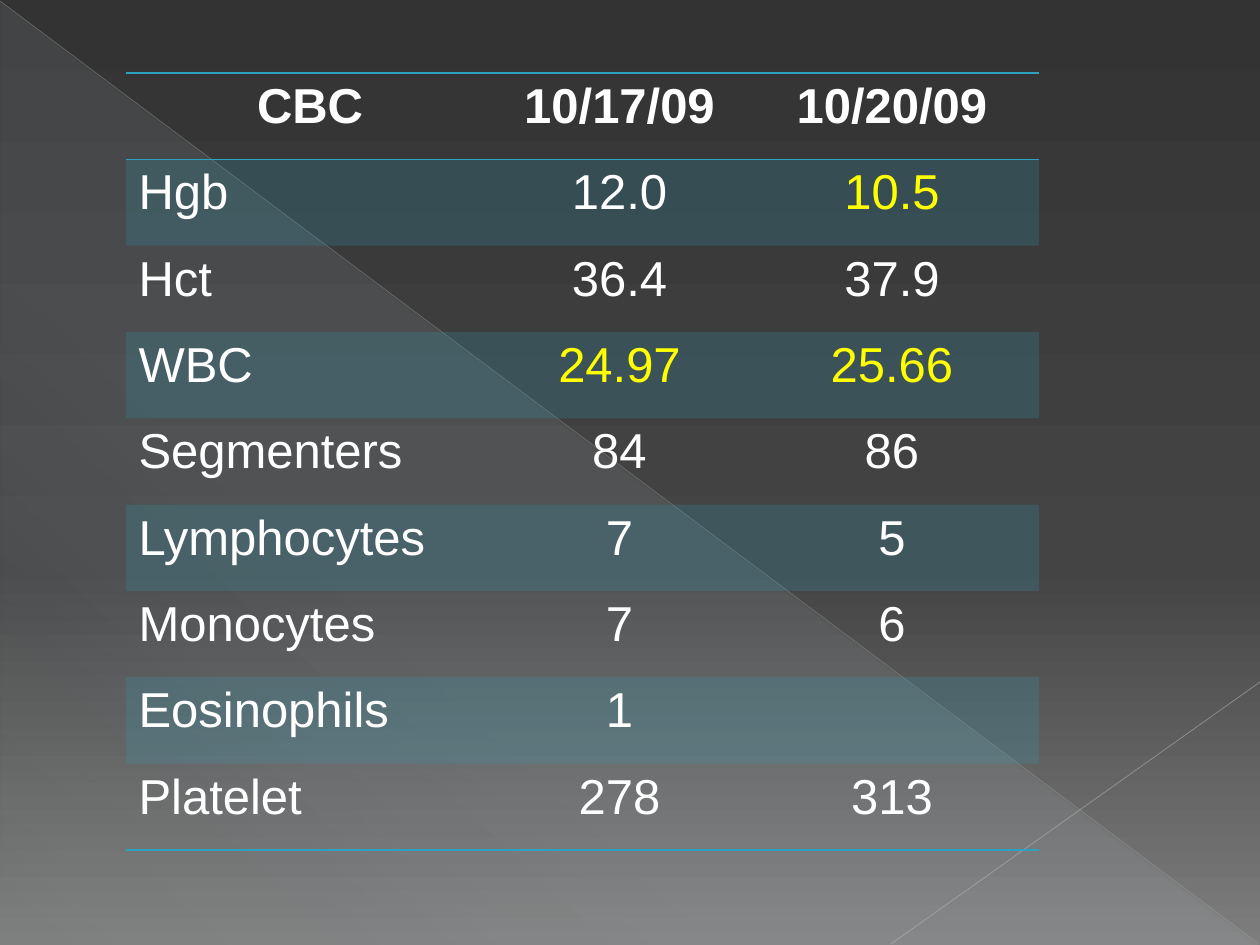
"""Build a slide with a table of blood counts from two dates."""
from typing import NamedTuple

from lxml import etree
from pptx import Presentation, util as u
from pptx.dml.color import RGBColor
from pptx.enum import shapes, text
from pptx.oxml import ns

SCALE = u.Inches(1) / 126
WHITE, YELLOW, TEAL = "FFFFFF", "FFFF00", "2DA2BF"
PLAIN = "{2D5ABB26-0587-4C30-8999-92F81FD0307C}"


class Stop(NamedTuple):
    pos: int
    hue: str
    alpha: int = 100


class Line(NamedTuple):
    start: tuple[int, int]
    end: tuple[int, int]
    hue: str
    width: float
    alpha: int


class Row(NamedTuple):
    name: str
    first: str
    second: str
    marks: tuple[int, ...] = ()


BACK = [Stop(0, "333333"), Stop(60, "444444"), Stop(100, "7D7D7D")]
SHEEN = [Stop(0, "DEF5FA", 10), Stop(70, "DEF5FA", 8), Stop(100, "DEF5FA", 1)]
LINES = [
    Line((0, 1), (1259, 944), "B9B9B9", 0.39, 35),
    Line((1260, 682), (891, 944), "C1C1C1", 0.47, 45),
]
ROWS = [
    Row("CBC", "10/17/09", "10/20/09"),
    Row("Hgb", "12.0", "10.5", (2,)),
    Row("Hct", "36.4", "37.9"),
    Row("WBC", "24.97", "25.66", (1, 2)),
    Row("Segmenters", "84", "86"),
    Row("Lymphocytes", "7", "5"),
    Row("Monocytes", "7", "6"),
    Row("Eosinophils", "1", ""),
    Row("Platelet", "278", "313"),
]
WIDTHS = (368, 251, 294)


def px(size: int) -> int:
    return round(size * SCALE)


def color(code: str) -> RGBColor:
    return RGBColor.from_string(code)


def add(root, tag: str, **attrs):
    return etree.SubElement(root, ns.qn(tag), {k: str(v) for k, v in attrs.items()})


def fade(root, alpha: int) -> None:
    add(next(root.iter(ns.qn("a:srgbClr"))), "a:alpha", val=alpha * 1000)


def blend(root, stops: list[Stop], angle: int) -> None:
    old = next(root.iter(ns.qn("a:solidFill")))
    new = etree.Element(ns.qn("a:gradFill"), rotWithShape="1")
    group = add(new, "a:gsLst")
    for stop in stops:
        mark = add(group, "a:gs", pos=stop.pos * 1000)
        add(mark, "a:srgbClr", val=stop.hue)
        fade(mark, stop.alpha)
    add(new, "a:lin", ang=angle * 60000, scaled=0)
    old.getparent().replace(old, new)


def draw(slide, line: Line) -> None:
    ends = [px(n) for n in line.start + line.end]
    item = slide.shapes.add_connector(shapes.MSO_CONNECTOR.STRAIGHT, *ends)
    item.line.color.rgb = color(line.hue)
    item.line.width = u.Pt(line.width)
    props = item.element.spPr
    fade(props, line.alpha)
    add(props, "a:effectLst")


def edge(props, tag: str) -> None:
    rule = add(props, tag, w=u.Pt(1))
    add(add(rule, "a:solidFill"), "a:srgbClr", val=TEAL)


def write(cell, words: str, *, hue: str = WHITE, bold: bool = False,
          center: bool = True) -> None:
    part = cell.text_frame.paragraphs[0]
    part.alignment = text.PP_ALIGN.CENTER if center else text.PP_ALIGN.LEFT
    part.font.size = u.Pt(28)
    if words:
        run = part.add_run()
        run.text = words
        font = run.font
        font.name, font.size, font.bold = "Arial", u.Pt(28), bold
        font.color.rgb = color(hue)


def chart(slide, rows: list[Row]) -> None:
    high = px(777)
    frame = slide.shapes.add_table(len(rows), len(WIDTHS), px(126), px(73),
                                   px(sum(WIDTHS)), high)
    table = frame.table
    table.first_row = table.horz_banding = False
    next(frame.element.iter(ns.qn("a:tableStyleId"))).text = PLAIN
    for col, wide in zip(table.columns, WIDTHS):
        col.width = px(wide)
    for r, row in enumerate(rows):
        table.rows[r].height = high // len(rows)
        for c, words in enumerate(row[:3]):
            cell = table.cell(r, c)
            write(cell, words, hue=YELLOW if c in row.marks else WHITE,
                  bold=r == 0, center=r == 0 or c > 0)
            props = cell._tc.get_or_add_tcPr()
            if r == 0:
                edge(props, "a:lnT")
            if r in (0, len(rows) - 1):
                edge(props, "a:lnB")
            if r % 2:
                cell.fill.solid()
                cell.fill.fore_color.rgb = color(TEAL)
                fade(props, 20)
            else:
                cell.fill.background()


def main() -> None:
    deck = Presentation()
    deck.slide_width, deck.slide_height = px(1260), px(945)
    slide = deck.slides.add_slide(deck.slide_layouts[6])
    slide.background.fill.solid()
    blend(slide.element, BACK, 90)
    sheen = slide.shapes.add_shape(shapes.MSO_SHAPE.RIGHT_TRIANGLE,
                                   px(1), px(2), px(1257), px(943))
    sheen.shadow.inherit = False
    sheen.line.fill.background()
    sheen.fill.solid()
    blend(sheen.element, SHEEN, 133)
    for line in LINES:
        draw(slide, line)
    chart(slide, ROWS)
    deck.save("out.pptx")


if __name__ == "__main__":
    main()
